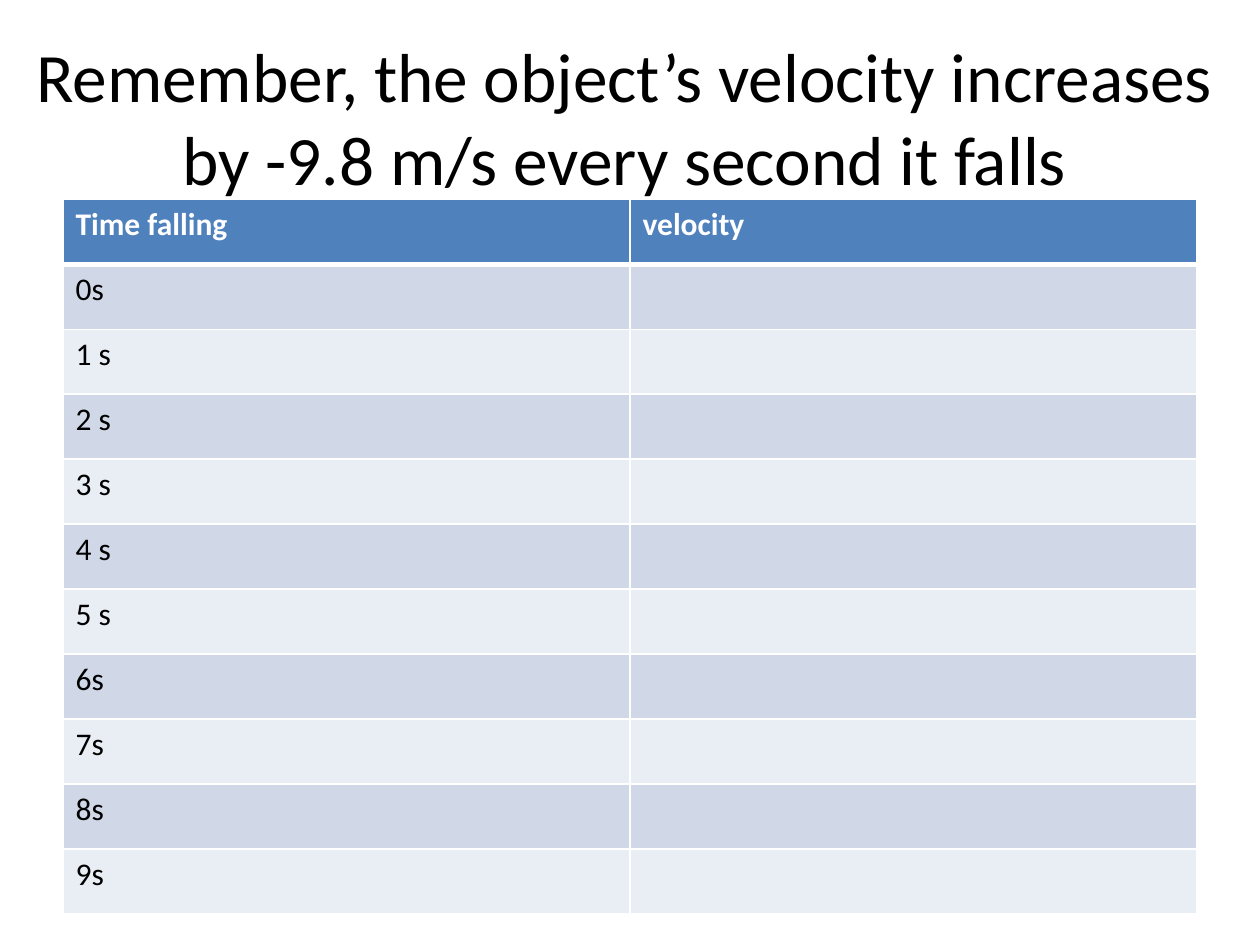
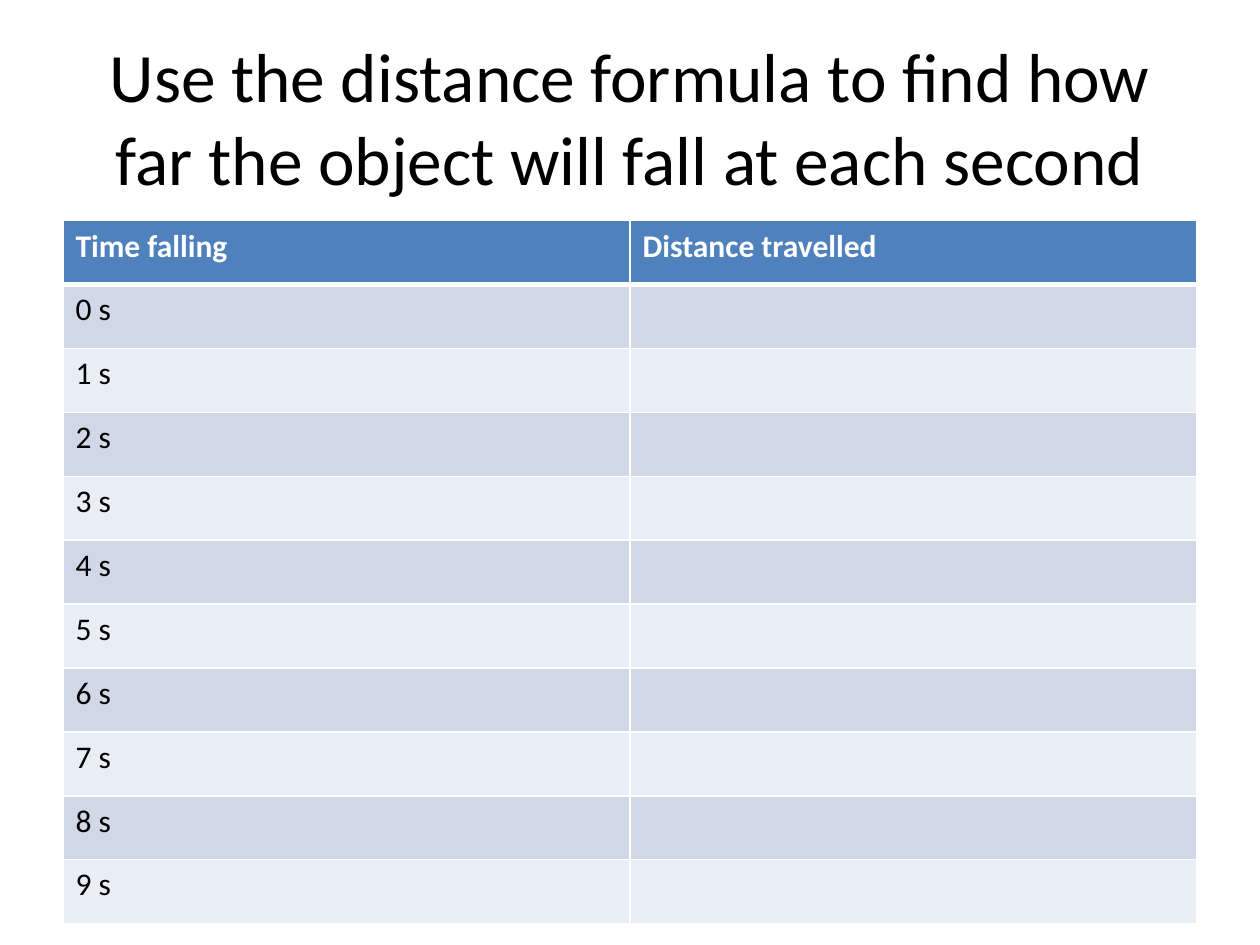
from lxml.etree import SubElement
from pptx import Presentation
from pptx.dml.color import RGBColor
from pptx.enum.text import MSO_ANCHOR as Anchor, MSO_AUTO_SIZE as AutoSize, PP_ALIGN as Align
from pptx.oxml.ns import qn
from pptx.util import Cm, Pt

BLACK, WHITE = "000000", "FFFFFF"
HEADER_BLUE = "4F81BD"
BANDS = ("D0D8E8", "E9EDF4")
THIN, THICK = Pt(1), Pt(3)


def rgb(hex_colour):
    return RGBColor.from_string(hex_colour)


def apply(target, values):
    for attribute, value in values.items():
        setattr(target, attribute, value)


class FallingDeck:
    """Holds the shared style and the slide being built."""

    title_font = {"name": "Calibri", "size": Pt(39.6), "bold": False}
    header_font = {"name": "Calibri", "size": Pt(18), "bold": True}
    time_font = header_font | {"bold": False}
    title_frame = {"word_wrap": True, "auto_size": AutoSize.NONE,
                   "vertical_anchor": Anchor.MIDDLE}

    def __init__(self):
        self.deck = Presentation()
        apply(self.deck, {"slide_width": Cm(25.4), "slide_height": Cm(19.05)})
        self.slide = None

    def new_slide(self):
        self.slide = self.deck.slides.add_slide(self.deck.slide_layouts[5])

    def styled_run(self, paragraph, text, font, colour):
        run = paragraph.add_run()
        run.text = text
        apply(run.font, font)
        run.font.color.rgb = rgb(colour)

    def title(self, text, left, width):
        heading = self.slide.shapes.title
        apply(heading, {"left": Cm(left), "top": Cm(0.76),
                        "width": Cm(width), "height": Cm(3.18)})
        apply(heading.text_frame, self.title_frame)
        paragraph = heading.text_frame.paragraphs[0]
        paragraph.alignment = Align.CENTER
        self.styled_run(paragraph, text, self.title_font, BLACK)

    def borders(self, cell, top, bottom):
        properties = cell._tc.get_or_add_tcPr()
        for side, width in {"L": THIN, "R": THIN, "T": top, "B": bottom}.items():
            line = SubElement(properties, qn(f"a:ln{side}"), w=str(int(width)))
            fill = SubElement(line, qn("a:solidFill"))
            SubElement(fill, qn("a:srgbClr"), val=WHITE)

    def fall_table(self, headings, times, top, height):
        rows = [headings] + [(time, "") for time in times]
        table = self.slide.shapes.add_table(
            len(rows), len(headings), Cm(1.27), Cm(top), Cm(22.86), Cm(height)).table
        for r, row in enumerate(rows):
            is_header = r == 0
            font = self.header_font if is_header else self.time_font
            for c, text in enumerate(row):
                cell = table.cell(r, c)
                # The thick rule lies between the header and the first time
                self.borders(cell, THICK if r == 1 else THIN, THICK if is_header else THIN)
                cell.fill.solid()
                cell.fill.fore_color.rgb = rgb(HEADER_BLUE if is_header else BANDS[(r - 1) % 2])
                if text:
                    self.styled_run(cell.text_frame.paragraphs[0], text, font,
                                    WHITE if is_header else BLACK)

    def save(self):
        self.deck.save("out.pptx")


def main():
    lesson = FallingDeck()

    # Velocity at each second
    lesson.new_slide()
    lesson.title("Remember, the object’s velocity increases by -9.8 m/s every second it falls",
                 0.43, 24.33)
    lesson.fall_table(("Time falling", "velocity"),
                      ["0s", "1 s", "2 s", "3 s", "4 s", "5 s", "6s", "7s", "8s", "9s"],
                      4.02, 14.4)

    # Distance at each second
    lesson.new_slide()
    lesson.title("Use the distance formula to find how far the object will fall at each second",
                 1.27, 22.86)
    lesson.fall_table(("Time falling", "Distance travelled"),
                      [f"{second} s" for second in range(10)], 4.45, 14.17)

    lesson.save()


if __name__ == "__main__":
    main()
